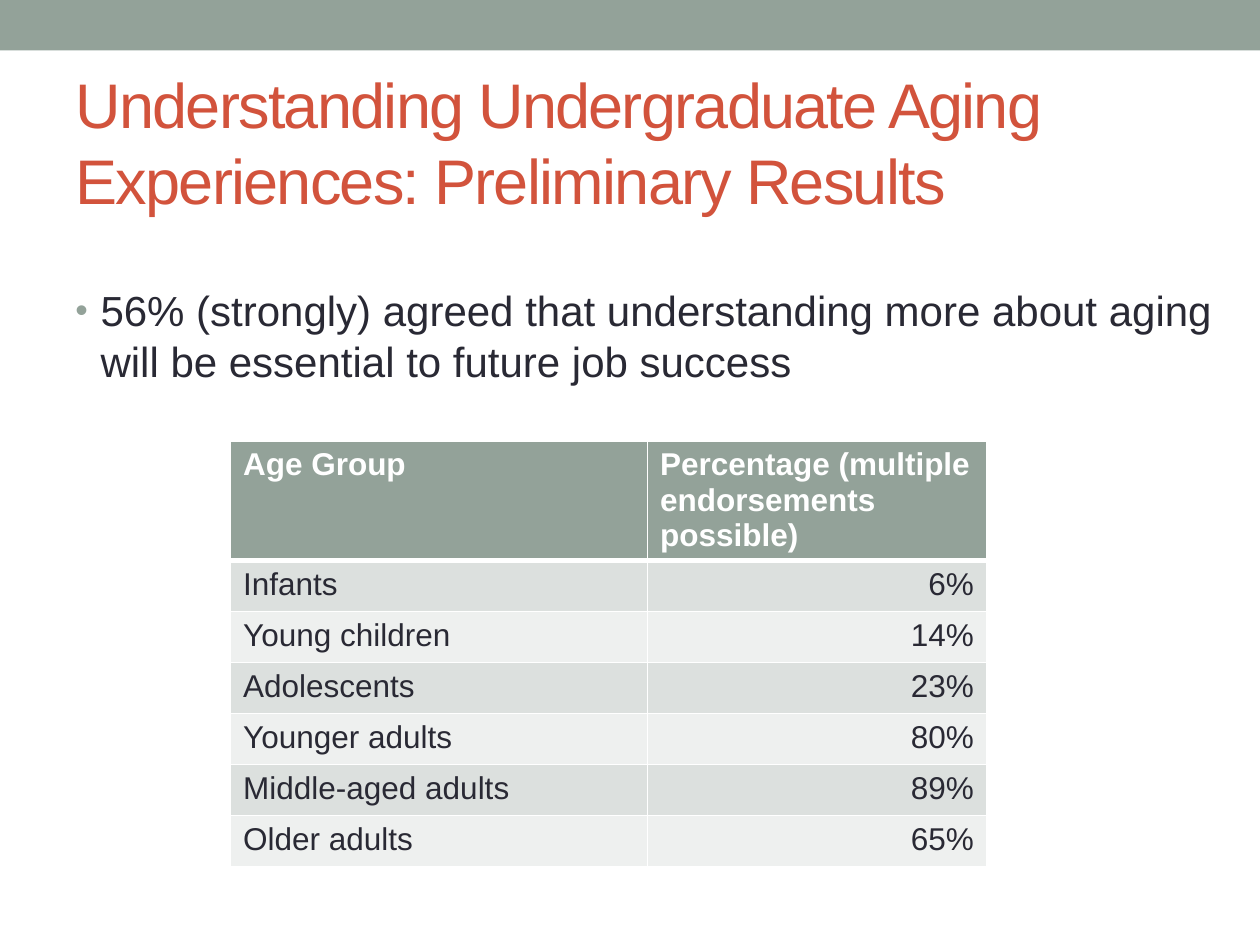
import dataclasses

import pptx
import pptx.dml.color
import pptx.enum.shapes
import pptx.enum.text
import pptx.oxml
import pptx.oxml.ns
import pptx.util

ALIGN = pptx.enum.text.PP_ALIGN
ANCHOR = pptx.enum.text.MSO_ANCHOR

AGE_GROUPS = [
    ("Age Group", "Percentage (multiple endorsements possible)"),
    ("Infants", "6%"),
    ("Young children", "14%"),
    ("Adolescents", "23%"),
    ("Younger adults", "80%"),
    ("Middle-aged adults", "89%"),
    ("Older adults", "65%"),
]


@dataclasses.dataclass(frozen=True)
class Theme:
    font: str = "Arial"
    accent: str = "93A299"
    title: str = "D2533C"
    text: str = "292934"
    light: str = "FFFFFF"
    bands: tuple = ("DCE0DE", "EEF0EF")
    title_size: int = 36
    body_size: int = 24
    table_size: int = 18


def rgb(color):
    return pptx.dml.color.RGBColor.from_string(color)


def add_xml(parent, xml):
    """Append a drawing element whose tag uses the a: prefix."""
    ns = pptx.oxml.ns.nsdecls("a")
    tag, rest = xml[1:].split(" ", 1)
    parent.append(pptx.oxml.parse_xml(f"<{tag} {ns} {rest}"))


class SlideBuilder:
    """Places elements by shares of the slide's width and height."""

    def __init__(self, prs, theme):
        self.prs, self.theme = prs, theme
        self.s = prs.slides.add_slide(prs.slide_layouts[5])

    def box(self, x, y, w, h):
        width, height = self.prs.slide_width, self.prs.slide_height
        return [round(v) for v in (x * width, y * height, w * width, h * height)]

    def style(self, p, size, color, bold=False, align=ALIGN.LEFT):
        p.font.name, p.font.size = self.theme.font, pptx.util.Pt(size)
        p.font.bold, p.font.color.rgb = bold, rgb(color)
        p.alignment = align

    def bar(self, *share):
        sp = self.s.shapes.add_shape(
            pptx.enum.shapes.MSO_SHAPE.RECTANGLE, *self.box(*share))
        sp.shadow.inherit = False
        sp.fill.solid()
        sp.fill.fore_color.rgb = rgb(self.theme.accent)
        sp.line.fill.background()

    def title(self, text, *share):
        sp = self.s.shapes.title
        sp.left, sp.top, sp.width, sp.height = self.box(*share)
        tf = sp.text_frame
        tf.text = text
        tf.auto_size = pptx.enum.text.MSO_AUTO_SIZE.NONE
        tf.vertical_anchor = ANCHOR.MIDDLE
        p = tf.paragraphs[0]
        self.style(p, self.theme.title_size, self.theme.title)
        p.runs[0].font._element.set("spc", "-100")

    def bullet(self, text, *share, inset_top):
        tf = self.s.shapes.add_textbox(*self.box(*share)).text_frame
        tf.word_wrap = True
        tf.margin_top = pptx.util.Inches(inset_top)
        tf.text = text
        p = tf.paragraphs[0]
        self.style(p, self.theme.body_size, self.theme.text)
        props = p._p.get_or_add_pPr()
        indent = pptx.util.Inches(0.2)
        props.set("marL", str(indent))
        props.set("indent", str(-indent))
        marks = [
            f'<a:buClr ><a:srgbClr val="{self.theme.accent}"/></a:buClr>',
            '<a:buSzPct val="85000"/>',
            '<a:buFont typeface="Arial"/>',
            '<a:buChar char="•"/>',
        ]
        for xml in marks:
            add_xml(props, xml)
        # Default run properties follow the bullet marks in the schema.
        props.append(props.find(pptx.oxml.ns.qn("a:defRPr")))

    def borders(self, cell, header):
        props = cell._tc.get_or_add_tcPr()
        for i, side in enumerate("LRTB"):
            width = pptx.util.Pt(3 if header and side == "B" else 1)
            add_xml(props, f'<a:ln{side} w="{width}"><a:solidFill><a:srgbClr '
                           f'val="{self.theme.light}"/></a:solidFill></a:ln{side}>')
            props.insert(i, props[-1])

    def table(self, rows, x, y, col_widths, row_height):
        share = (x, y, sum(col_widths), row_height * len(rows))
        table = self.s.shapes.add_table(
            len(rows), len(col_widths), *self.box(*share)).table
        for col, width in zip(table.columns, col_widths):
            col.width = round(width * self.prs.slide_width)
        for i, row in enumerate(rows):
            header = i == 0
            fill = self.theme.accent if header else self.theme.bands[(i - 1) % 2]
            color = self.theme.light if header else self.theme.text
            for j, text in enumerate(row):
                cell = table.cell(i, j)
                cell.text = text
                cell.fill.solid()
                cell.fill.fore_color.rgb = rgb(fill)
                if header:
                    cell.margin_bottom = 0
                align = ALIGN.RIGHT if j and not header else ALIGN.LEFT
                self.style(cell.text_frame.paragraphs[0], self.theme.table_size,
                           color, header, align)
                self.borders(cell, header)


def main():
    prs = pptx.Presentation()
    prs.slide_width, prs.slide_height = pptx.util.Inches(10), pptx.util.Inches(7.5)
    slide = SlideBuilder(prs, Theme())
    slide.bar(0, 0, 1, 0.4 / 7.5)
    slide.title("Understanding Undergraduate Aging Experiences: Preliminary Results",
                0.05, 0.58 / 7.5, 0.9, 1.08 / 7.5)
    slide.bullet("56% (strongly) agreed that understanding more about aging "
                 "will be essential to future job success",
                 0.05, 1.75 / 7.5, 0.95, 5.33 / 7.5, inset_top=0.51)
    slide.table(AGE_GROUPS, 1.83 / 10, 3.5 / 7.5, (3.31 / 10, 2.69 / 10), 0.054)
    prs.save("out.pptx")


if __name__ == "__main__":
    main()
